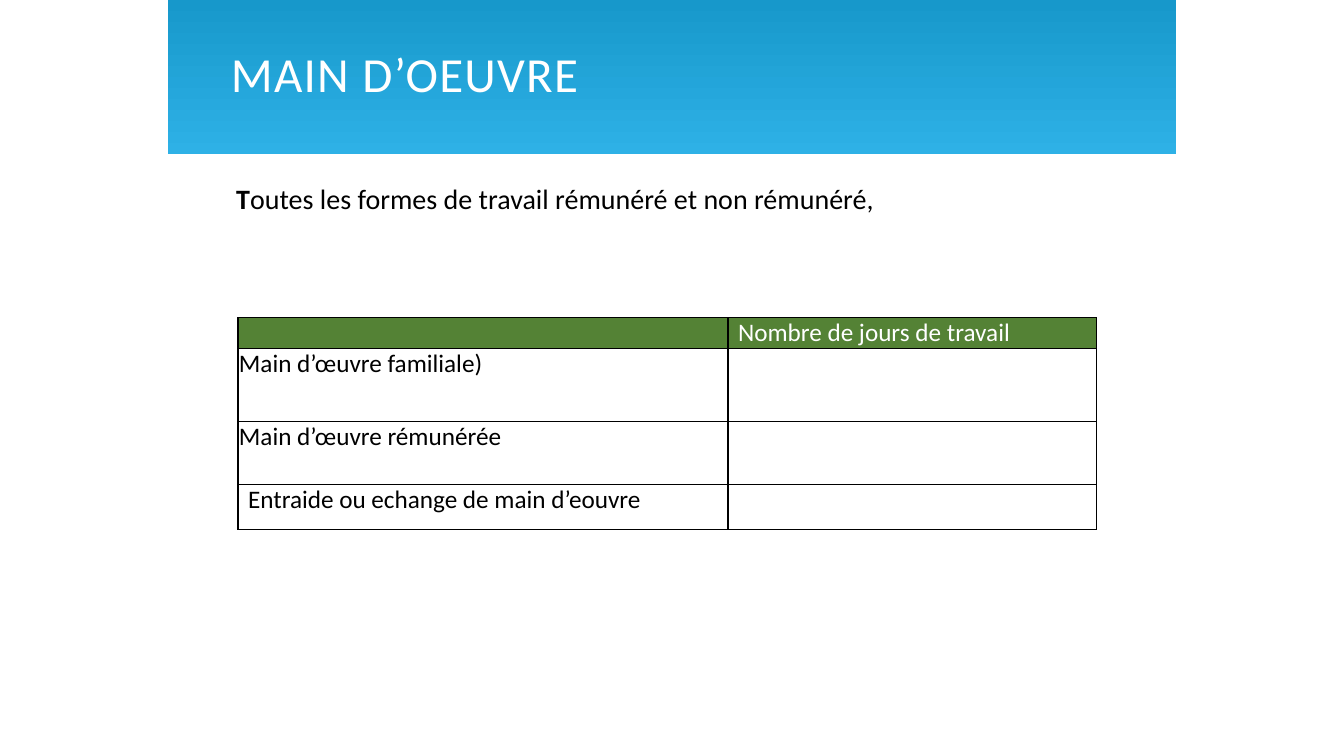
import pptx
import pptx.dml.color
import pptx.enum.shapes
import pptx.enum.text
import pptx.oxml
import pptx.oxml.ns
import pptx.util

Pt = pptx.util.Pt
RGBColor = pptx.dml.color.RGBColor
ANCHOR = pptx.enum.text.MSO_ANCHOR

BANNER_TOP = RGBColor(0x17, 0x98, 0xCB)
BANNER_BOTTOM = RGBColor(0x2E, 0xB1, 0xE6)
HEADER_GREEN = RGBColor(0x54, 0x82, 0x35)
BLACK = RGBColor(0, 0, 0)
WHITE = RGBColor(0xFF, 0xFF, 0xFF)

COLUMN_WIDTHS = (350, 263)
ROW_HEIGHTS = (22, 52, 45, 32)
# Each entry: text, left margin in points
ROWS = (
    (("", 0), ("Nombre de jours de travail", 7.2)),
    (("Main d’œuvre familiale)", 0.7), ("", 0)),
    (("Main d’œuvre rémunérée", 0.7), ("", 0)),
    (("Entraide ou echange de main d’eouvre", 7.2), ("", 0)),
)


class SlideBuilder:
    font_name = "Calibri"
    table_size = 18

    def __init__(self, slide):
        self.slide = slide

    def style_font(self, font, size, color, bold=False):
        font.name = self.font_name
        font.size = Pt(size)
        font.color.rgb = color
        font.bold = bold

    def banner(self, left, top, width, height):
        shape = self.slide.shapes.add_shape(
            pptx.enum.shapes.MSO_SHAPE.RECTANGLE, Pt(left), Pt(top), Pt(width), Pt(height))
        shape.shadow.inherit = False
        shape.line.fill.background()
        shape.fill.gradient()
        shape.fill.gradient_angle = 270
        for stop, color, position in zip(
                shape.fill.gradient_stops, (BANNER_TOP, BANNER_BOTTOM), (0, 1)):
            stop.color.rgb = color
            stop.position = position

    def text(self, box, parts, size, color, inset, anchor=ANCHOR.TOP, spacing=0):
        """Add one paragraph; parts holds (text, bold) pairs, spacing is between letters."""
        shape = self.slide.shapes.add_textbox(*map(Pt, box))
        frame = shape.text_frame
        frame.word_wrap = True
        frame.vertical_anchor = anchor
        frame.margin_left = Pt(inset)
        paragraph = frame.paragraphs[0]
        paragraph.line_spacing = 0.9
        for content, bold in parts:
            run = paragraph.add_run()
            run.text = content
            self.style_font(run.font, size, color, bold)
            if spacing:
                run.font._element.set("spc", str(round(spacing * 100)))

    def cell_borders(self, cell):
        properties = cell._tc.get_or_add_tcPr()
        for side in ("lnL", "lnR", "lnT", "lnB"):
            properties.append(pptx.oxml.parse_xml(
                f'<a:{side} {pptx.oxml.ns.nsdecls("a")} w="{Pt(1)}"><a:solidFill>'
                f'<a:srgbClr val="{BLACK}"/></a:solidFill></a:{side}>'))

    def table(self, left, top):
        frame = self.slide.shapes.add_table(
            len(ROWS), len(COLUMN_WIDTHS), Pt(left), Pt(top),
            Pt(sum(COLUMN_WIDTHS)), Pt(sum(ROW_HEIGHTS)))
        table = frame.table
        table.first_row = table.horz_banding = False
        for column, width in zip(table.columns, COLUMN_WIDTHS):
            column.width = Pt(width)
        for row_index, (row, height) in enumerate(zip(table.rows, ROW_HEIGHTS)):
            row.height = Pt(height)
            for cell, (content, margin) in zip(row.cells, ROWS[row_index]):
                self.cell(cell, content, margin, is_header=row_index == 0)

    def cell(self, cell, content, margin, is_header):
        self.cell_borders(cell)
        cell.margin_left = Pt(margin)
        cell.margin_right = cell.margin_top = cell.margin_bottom = 0
        cell.text_frame.text = content
        paragraph = cell.text_frame.paragraphs[0]
        paragraph.font.size = Pt(self.table_size)
        for run in paragraph.runs:
            self.style_font(run.font, self.table_size, WHITE if is_header else BLACK)
        if is_header:
            cell.vertical_anchor = ANCHOR.BOTTOM
            cell.fill.solid()
            cell.fill.fore_color.rgb = HEADER_GREEN
        else:
            cell.fill.background()


def main():
    presentation = pptx.Presentation()
    presentation.slide_width = Pt(960)
    presentation.slide_height = Pt(540)
    builder = SlideBuilder(presentation.slides.add_slide(presentation.slide_layouts[6]))
    builder.banner(120, 0, 720, 110)
    builder.text((157, 4.3, 639, 101), [("MAIN D’OEUVRE", False)], 35, WHITE,
                 inset=7.9, anchor=ANCHOR.MIDDLE, spacing=0.9)
    builder.text((157, 129, 662, 379),
                 [("T", True), ("outes les formes de travail rémunéré et non rémunéré,", False)],
                 20, BLACK, inset=11.7)
    builder.table(170, 227)
    presentation.save("out.pptx")


if __name__ == "__main__":
    main()
